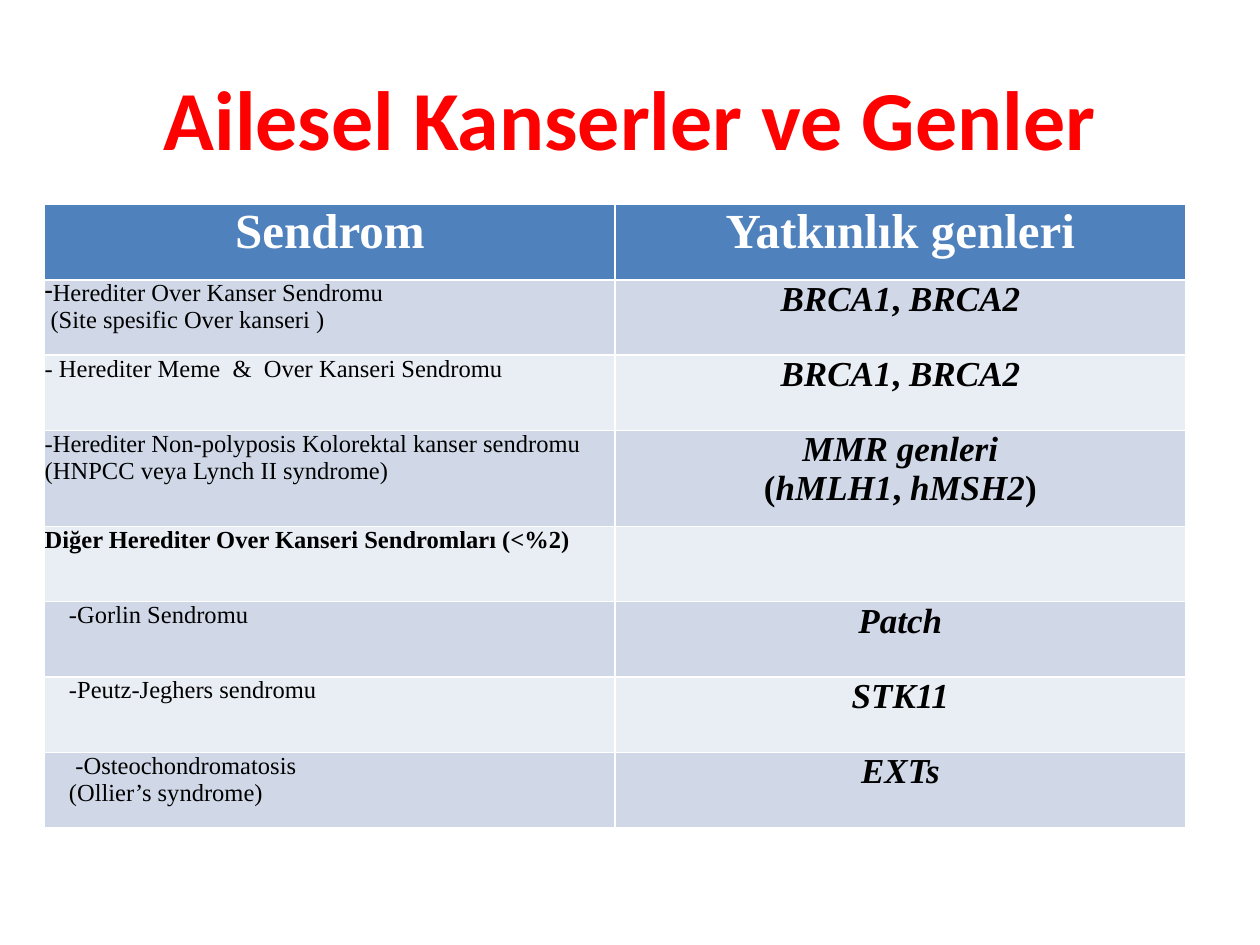
import pptx
import pptx.util
import pptx.dml.color
import pptx.enum.text
import pptx.oxml.ns
import lxml.etree

Cm = pptx.util.Cm
Pt = pptx.util.Pt
Color = pptx.dml.color.RGBColor
Align = pptx.enum.text.PP_ALIGN
Anchor = pptx.enum.text.MSO_ANCHOR

RED = Color(0xFF, 0x00, 0x00)
WHITE = Color(0xFF, 0xFF, 0xFF)
BLACK = Color(0x00, 0x00, 0x00)
BLUE = Color(0x4F, 0x81, 0xBD)
BANDS = [Color(0xD0, 0xD8, 0xE8), Color(0xE9, 0xED, 0xF4)]
SERIF = "Times New Roman"

TITLE = "Ailesel Kanserler ve Genler"
HEADS = ["Sendrom", "Yatkınlık genleri"]
BRCA = [["BRCA1", ", ", "BRCA2"]]
GROUP = "Diğer Herediter Over Kanseri Sendromları (<%2)"
DASH = "dash"

# Each row: lines of (text, indent in cm or DASH), then lines of gene runs
ROWS = [
    ([("Herediter Over Kanser Sendromu", DASH),
      ("(Site spesific Over kanseri )", 0.12)], BRCA),
    ([("- Herediter Meme  &  Over Kanseri Sendromu", 0)], BRCA),
    ([("-Herediter Non-polyposis Kolorektal kanser sendromu", 0),
      ("(HNPCC veya Lynch II syndrome)", 0)],
     [["MMR genleri"], ["(", "hMLH1", ", ", "hMSH2", ")"]]),
    ([(GROUP, 0)], []),
    ([("-Gorlin Sendromu", 0.49)], [["Patch"]]),
    ([("-Peutz-Jeghers sendromu", 0.49)], [["STK11"]]),
    ([("-Osteochondromatosis", 0.62), ("(Ollier’s syndrome)", 0.49)], [["EXTs"]]),
]
HIGH, TALL, WIDE = 1.52, 1.93, 11.5


def add_run(par, text, size, color, bold=True, slant=False, face=SERIF):
    run = par.add_run()
    run.text = text
    font = run.font
    font.name, font.size, font.bold, font.italic = face, Pt(size), bold, slant
    font.color.rgb = color


def indent(par, inset):
    props = par._p.get_or_add_pPr()
    if inset == DASH:
        props.set("marL", str(Cm(0.16)))
        props.set("indent", str(-Cm(0.16)))
        mark = lxml.etree.SubElement(props, pptx.oxml.ns.qn("a:buChar"))
        mark.set("char", "-")
    elif inset:
        props.set("marL", str(Cm(inset)))


def add_par(frame, first, align):
    par = frame.paragraphs[0] if first else frame.add_paragraph()
    par.alignment = align
    return par


def paint(cell, color):
    cell.fill.solid()
    cell.fill.fore_color.rgb = color
    cell.margin_left = cell.margin_right = 0
    cell.margin_top = cell.margin_bottom = 0


def main():
    deck = pptx.Presentation()
    deck.slide_width, deck.slide_height = Cm(25.4), Cm(19.05)
    slide = deck.slides.add_slide(deck.slide_layouts[5])

    title = slide.shapes.title
    title.left, title.top = Cm(1.27), Cm(0.76)
    title.width, title.height = Cm(22.86), Cm(3.18)
    title.text_frame.vertical_anchor = Anchor.MIDDLE
    par = add_par(title.text_frame, True, Align.CENTER)
    add_run(par, TITLE, 48, RED, face="Calibri")

    highs = [HIGH] + [TALL if len(genes) > 1 else HIGH for _, genes in ROWS]
    table = slide.shapes.add_table(
        len(highs), len(HEADS), Cm(0.9), Cm(4.12),
        Cm(WIDE * len(HEADS)), Cm(sum(highs))).table
    for row, high in zip(table.rows, highs):
        row.height = Cm(high)

    for col, head in enumerate(HEADS):
        table.columns[col].width = Cm(WIDE)
        cell = table.cell(0, col)
        paint(cell, BLUE)
        add_run(add_par(cell.text_frame, True, Align.CENTER), head, 28, WHITE)

    for num, (names, genes) in enumerate(ROWS):
        left, right = table.cell(num + 1, 0), table.cell(num + 1, 1)
        for cell in (left, right):
            paint(cell, BANDS[num % 2])
        for pos, (text, inset) in enumerate(names):
            par = add_par(left.text_frame, pos == 0, Align.JUSTIFY)
            indent(par, inset)
            add_run(par, text, 14, BLACK, bold=text == GROUP)
        for pos, parts in enumerate(genes):
            par = add_par(right.text_frame, pos == 0, Align.CENTER)
            for part in parts:
                add_run(par, part, 20, BLACK, slant=any(map(str.isalnum, part)))

    deck.save("out.pptx")


if __name__ == "__main__":
    main()
